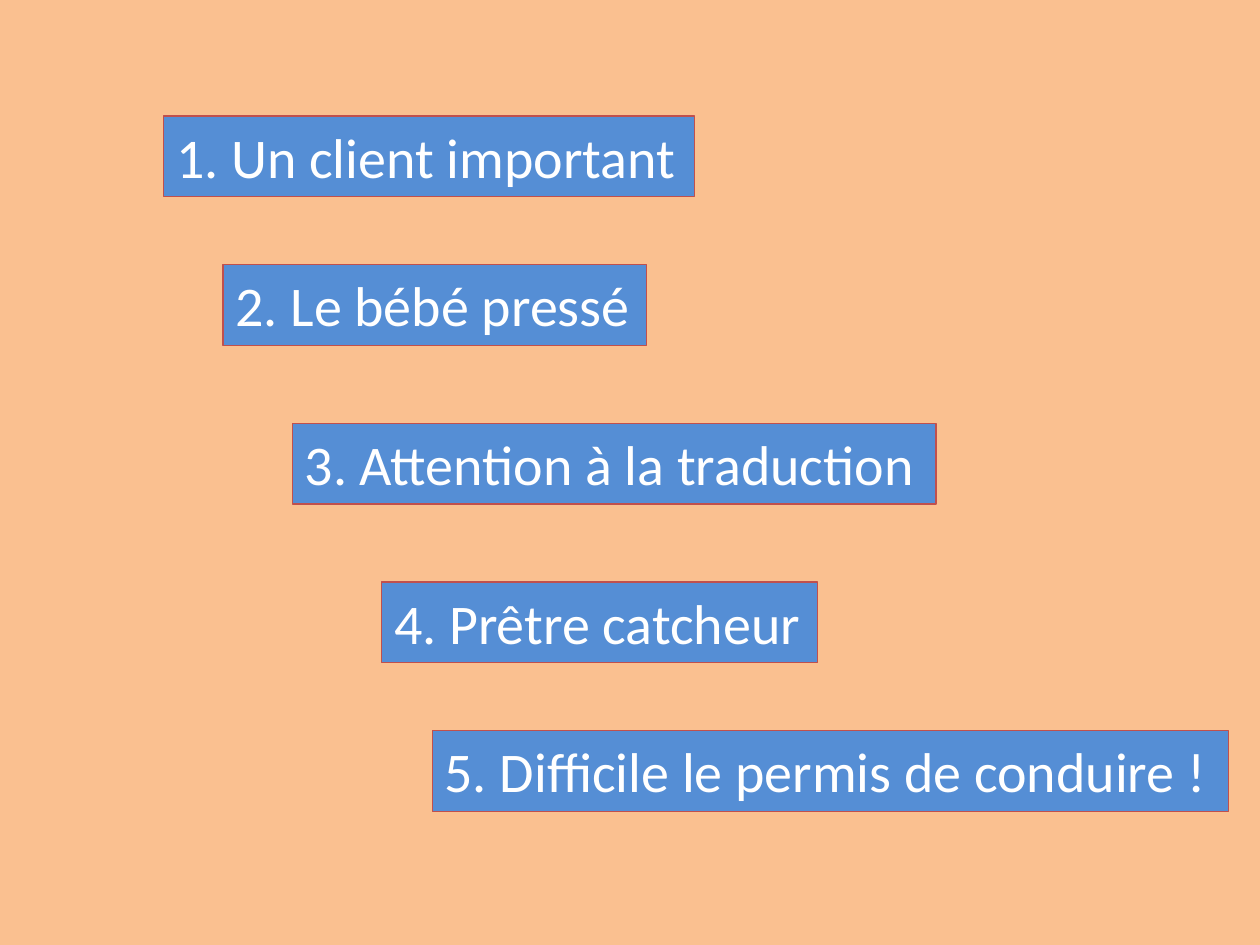
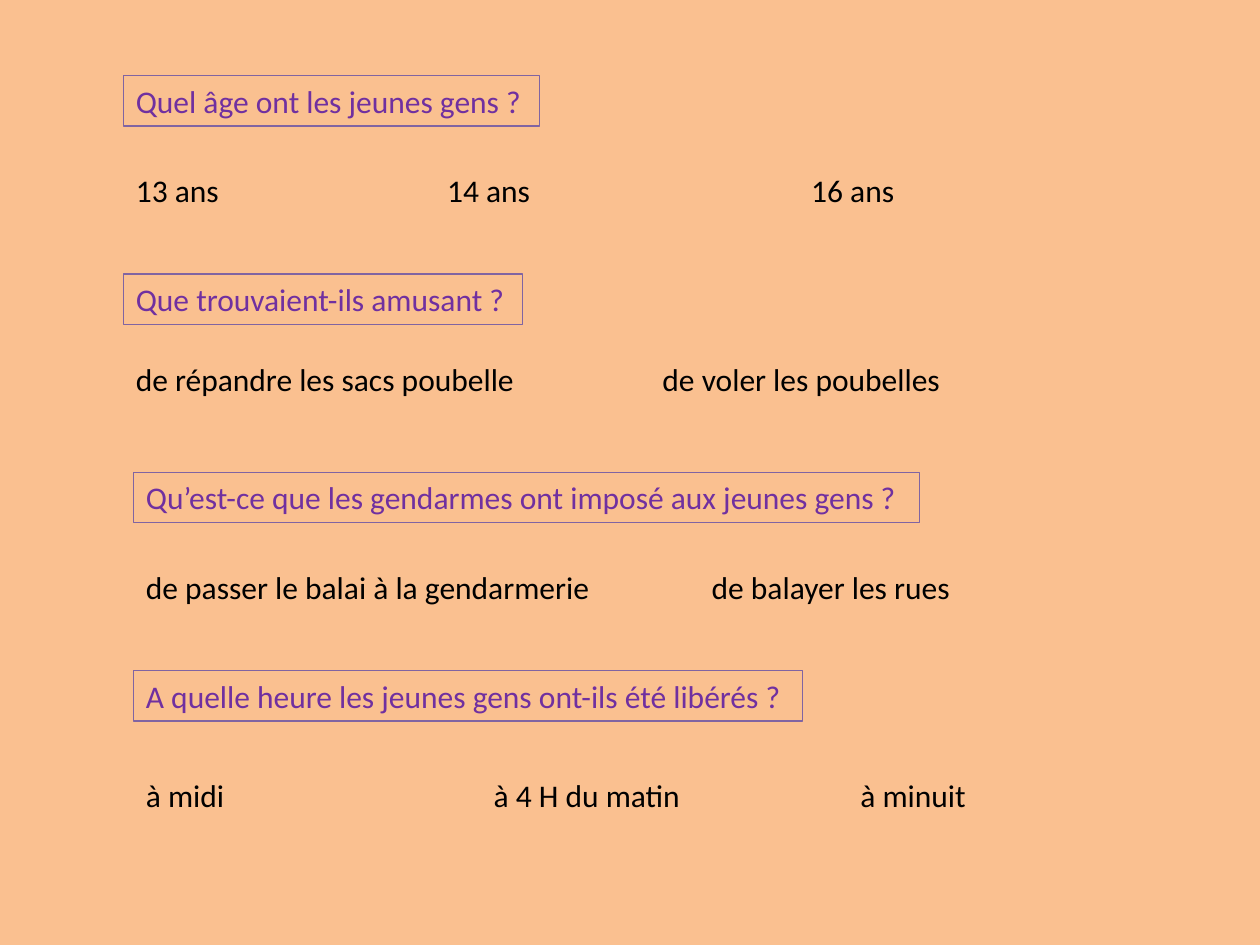
from pptx import Presentation
from pptx.dml.color import RGBColor
from pptx.enum.shapes import MSO_SHAPE
from pptx.enum.text import MSO_ANCHOR, MSO_AUTO_SIZE, PP_ALIGN
from pptx.util import Inches, Pt

COLORS = {
    "peach": "FAC090", "blue": "558ED5", "red": "C0504D", "white": "FFFFFF",
    "violet": "8064A2", "purple": "7030A0", "black": "000000",
}
CELL = Inches(0.1)

TITLES = [
    (13, 9.2, 42.1, "1. Un client important"),
    (17.7, 21, 33.6, "2. Le bébé pressé"),
    (23.2, 33.6, 51.1, "3. Attention à la traduction"),
    (30.3, 46.2, 34.6, "4. Prêtre catcheur"),
    (34.3, 58, 63.2, "5. Difficile le permis de conduire !"),
]
QUIZ = [
    (9.8, 33, "Quel âge ont les jeunes gens ?", 13.1,
     [(9.8, 8.7, "13 ans"), (29.5, 18.8, "\t14 ans"), (63.4, 8.7, "16 ans")]),
    (9.8, 31.7, "Que trouvaient-ils amusant ?", 28.1,
     [(9.8, 32.4, "de répandre les sacs poubelle"),
      (51.6, 24.3, "de voler les poubelles")]),
    (10.6, 62.4, "Qu’est-ce que les gendarmes ont imposé aux jeunes gens ?", 44.6,
     [(10.6, 37.7, "de passer le balai à la gendarmerie"),
      (55.5, 21.2, "de balayer les rues")]),
    (10.6, 53.1, "A quelle heure les jeunes gens ont-ils été libérés ?", 61.1,
     [(10.6, 8.3, "à midi"), (38.2, 17, "à 4 H du matin"),
      (67.3, 10.5, "à minuit")]),
]


class Deck:
    """Hold the shared style and the current slide, on a grid of 100 by 75 cells."""

    def __init__(self):
        self.file = Presentation()
        self.file.slide_width = 100 * CELL
        self.file.slide_height = 75 * CELL
        self.slide = None

    def page(self):
        self.slide = self.file.slides.add_slide(self.file.slide_layouts[6])
        self.paint(self.slide.background.fill, "peach")

    def paint(self, fill, color):
        fill.solid()
        fill.fore_color.rgb = RGBColor.from_string(COLORS[color])

    def area(self, col, row, wide, high):
        return [round(n * CELL) for n in (col, row, wide, high)]

    def label(self, shape, text, size, color):
        frame = shape.text_frame
        frame.text = text
        frame.word_wrap = False
        frame.auto_size = MSO_AUTO_SIZE.SHAPE_TO_FIT_TEXT
        frame.vertical_anchor = MSO_ANCHOR.TOP
        line = frame.paragraphs[0]
        line.alignment = PP_ALIGN.LEFT
        line.font.name = "Calibri"
        line.font.size = Pt(size)
        line.font.color.rgb = RGBColor.from_string(COLORS[color])

    def box(self, area, text, size, color, edge, fill=None):
        shape = self.slide.shapes.add_shape(MSO_SHAPE.RECTANGLE, *self.area(*area))
        shape.shadow.inherit = False
        if fill:
            self.paint(shape.fill, fill)
        else:
            shape.fill.background()
        self.paint(shape.line.fill, edge)
        shape.line.width = Pt(0.75)
        self.label(shape, text, size, color)

    def title(self, col, row, wide, text):
        self.box((col, row, wide, 6.4), text, 32, "white", "red", "blue")

    def query(self, col, row, wide, text):
        self.box((col, row, wide, 4), text, 18, "purple", "violet")

    def answer(self, col, row, wide, text):
        shape = self.slide.shapes.add_textbox(*self.area(col, row, wide, 4))
        self.label(shape, text, 18, "black")


def main():
    deck = Deck()
    deck.page()
    for title in TITLES:
        deck.title(*title)

    deck.page()
    for step, (col, wide, text, row, answers) in enumerate(QUIZ):
        deck.query(col, 6 + 15.74 * step, wide, text)
        for left, span, reply in answers:
            deck.answer(left, row, span, reply)
    deck.file.save("out.pptx")


if __name__ == "__main__":
    main()
